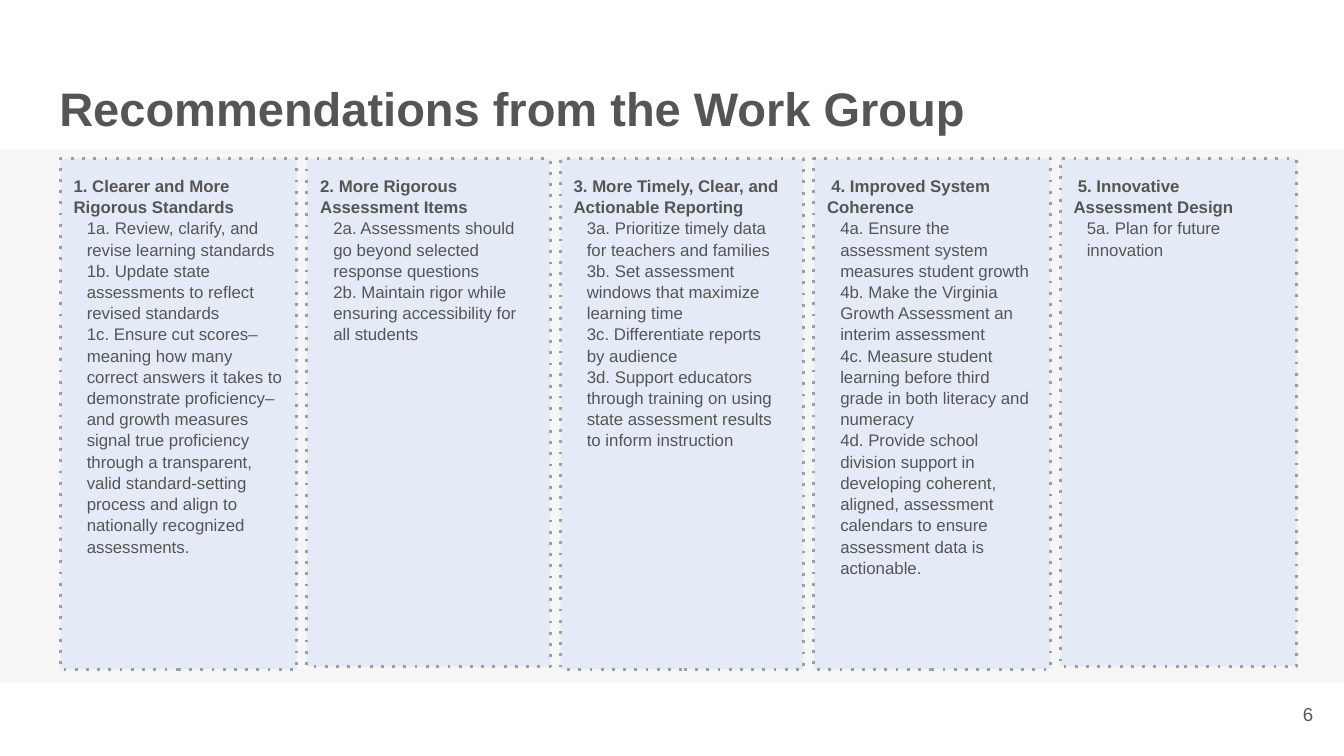
import pptx
import pptx.dml.color
import pptx.enum.shapes
import pptx.enum.text
import pptx.util
from lxml import etree
from pptx.oxml.ns import qn
from pptx.util import Cm

TEXT_GREY = pptx.dml.color.RGBColor(0x55, 0x55, 0x55)
NUMBER_GREY = pptx.dml.color.RGBColor(0x59, 0x59, 0x59)
BORDER_GREY = pptx.dml.color.RGBColor(0x9E, 0x9E, 0x9E)
BAND_GREY = pptx.dml.color.RGBColor(0xEF, 0xEF, 0xEF)
COLUMN_BLUE = pptx.dml.color.RGBColor(0xA1, 0xC3, 0xFA)

ALIGN = pptx.enum.text.PP_ALIGN
ANCHOR = pptx.enum.text.MSO_ANCHOR
COLUMN_LEFT, COLUMN_TOP, COLUMN_GAP = 1.14, 3.0, 0.19
INSET = 0.25

# Each column: width, height, right inset, bottom inset, heading indent, heading, items
COLUMNS = [
    (4.47, 9.65, INSET, INSET, 0, "1. Clearer and More Rigorous Standards", [
        "1a. Review, clarify, and revise learning standards",
        "1b. Update state assessments to reflect revised standards",
        "1c. Ensure cut scores–meaning how many correct answers it takes to "
        "demonstrate proficiency–and growth measures signal true proficiency "
        "through a transparent, valid standard-setting process and align to "
        "nationally recognized assessments."]),
    (4.6, 9.6, 0.4, INSET, 0, "2. More Rigorous Assessment Items", [
        "2a. Assessments should go beyond selected response questions",
        "2b. Maintain rigor while ensuring accessibility for all students"]),
    (4.6, 9.65, 0.4, INSET, 0, "3. More Timely, Clear, and Actionable Reporting", [
        "3a. Prioritize timely data for teachers and families",
        "3b. Set assessment windows that maximize learning time",
        "3c. Differentiate reports by audience",
        "3d. Support educators through training on using state assessment "
        "results to inform instruction"]),
    (4.47, 9.65, INSET, 0.05, 0.08, "4. Improved System Coherence", [
        "4a. Ensure the assessment system measures student growth",
        "4b. Make the Virginia Growth Assessment an interim assessment",
        "4c. Measure student learning before third grade in both literacy and numeracy",
        "4d. Provide school division support in developing coherent, aligned, "
        "assessment calendars to ensure assessment data is actionable."]),
    (4.47, 9.6, 0.4, INSET, 0.08, "5. Innovative Assessment Design", [
        "5a. Plan for future innovation"]),
]


def place(shape, left, top, width, height):
    shape.left, shape.top = Cm(left), Cm(top)
    shape.width, shape.height = Cm(width), Cm(height)


def fill_transparent(shape, color, percent):
    shape.fill.solid()
    shape.fill.fore_color.rgb = color
    tint = shape.element.find(qn("p:spPr")).find(qn("a:solidFill"))[0]
    etree.SubElement(tint, qn("a:alpha"), val=str(percent * 1000))


def dotted_border(shape):
    shape.line.color.rgb = BORDER_GREY
    shape.line.width = pptx.util.Pt(1.5)
    outline = shape.element.find(qn("p:spPr")).find(qn("a:ln"))
    etree.SubElement(outline, qn("a:prstDash"), val="dot")


def set_frame(frame, anchor, top=INSET, right=INSET, bottom=INSET):
    frame.word_wrap = True
    frame.auto_size = pptx.enum.text.MSO_AUTO_SIZE.NONE
    frame.vertical_anchor = anchor
    frame.margin_left, frame.margin_right = Cm(INSET), Cm(right)
    frame.margin_top, frame.margin_bottom = Cm(top), Cm(bottom)


def set_font(paragraph, size, color, bold=False):
    paragraph.font.name = "Arial"
    paragraph.font.size = pptx.util.Pt(size)
    paragraph.font.bold = bold
    paragraph.font.color.rgb = color


def set_column_paragraph(paragraph, text, margin=0, first_indent=0, bold=False):
    paragraph.text = text
    paragraph.alignment = ALIGN.LEFT
    paragraph.line_spacing = 1.05
    paragraph.space_before = paragraph.space_after = pptx.util.Pt(0)
    properties = paragraph._p.get_or_add_pPr()
    properties.set("marL", str(Cm(margin)))
    properties.set("indent", str(Cm(first_indent)))
    etree.SubElement(properties, qn("a:buNone"))
    set_font(paragraph, 9, TEXT_GREY, bold)


def add_title(slide):
    title = slide.shapes.title
    place(title, 0.87, 1.24, 23.67, 1.59)
    set_frame(title.text_frame, ANCHOR.MIDDLE)
    heading = title.text_frame.paragraphs[0]
    heading.text = "Recommendations from the Work Group"
    heading.alignment = ALIGN.LEFT
    set_font(heading, 25.2, TEXT_GREY, bold=True)


def add_band(slide):
    band = slide.shapes.add_shape(
        pptx.enum.shapes.MSO_SHAPE.RECTANGLE, 0, Cm(2.83), Cm(25.4), Cm(10.08))
    band.shadow.inherit = False
    fill_transparent(band, BAND_GREY, 50)
    band.line.fill.background()
    # Keep the band behind the columns
    slide.shapes.title.element.addnext(band.element)


def fill_column(column, right, bottom, heading_indent, heading, items):
    fill_transparent(column, COLUMN_BLUE, 20)
    dotted_border(column)
    frame = column.text_frame
    set_frame(frame, ANCHOR.TOP, 0.3, right, bottom)
    set_column_paragraph(frame.paragraphs[0], heading,
                         first_indent=heading_indent, bold=True)
    for item in items:
        set_column_paragraph(frame.add_paragraph(), item, margin=0.25)


def add_columns(slide):
    # The layout has four bodies; the fifth column is a text box
    bodies = [slide.placeholders[index] for index in range(1, 5)]
    bodies.append(slide.shapes.add_textbox(0, 0, 0, 0))
    left = COLUMN_LEFT
    for column, (width, height, *content) in zip(bodies, COLUMNS):
        place(column, left, COLUMN_TOP, width, height)
        fill_column(column, *content)
        left += width + COLUMN_GAP


def add_page_number(slide):
    page = slide.shapes.add_textbox(Cm(23.55), Cm(12.95), Cm(1.52), Cm(1.09))
    set_frame(page.text_frame, ANCHOR.MIDDLE)
    number = page.text_frame.paragraphs[0]
    number.text = "6"
    number.alignment = ALIGN.RIGHT
    set_font(number, 10, NUMBER_GREY)


def main():
    deck = pptx.Presentation()
    deck.slide_width, deck.slide_height = Cm(25.4), Cm(14.29)
    slide = deck.slides.add_slide(deck.slide_layouts.get_by_name("Comparison"))
    add_title(slide)
    add_band(slide)
    add_columns(slide)
    add_page_number(slide)
    deck.save("out.pptx")


if __name__ == "__main__":
    main()
